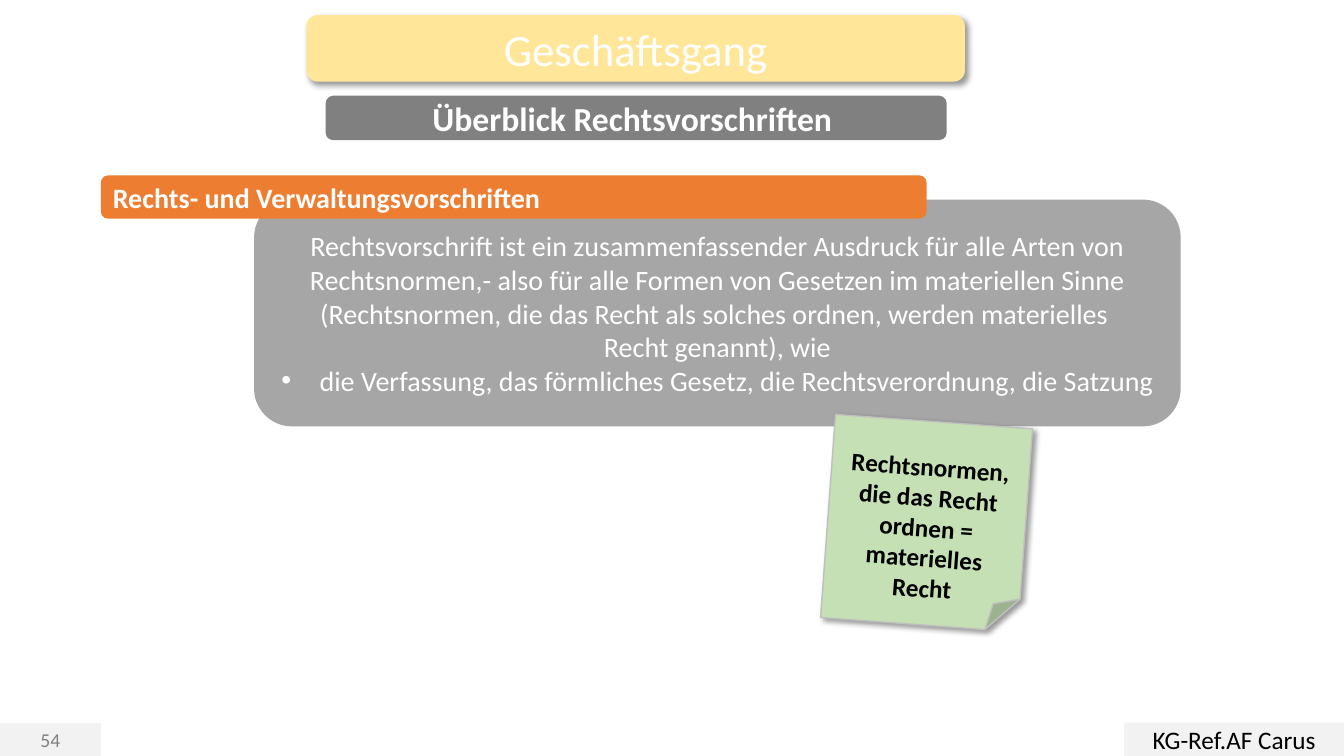
import pptx
import pptx.util
import pptx.dml.color
import pptx.enum.shapes
import pptx.enum.text
import pptx.oxml
import pptx.oxml.ns

Inches = pptx.util.Inches
Pt = pptx.util.Pt
MSO = pptx.enum.shapes.MSO_SHAPE
ALIGN = pptx.enum.text.PP_ALIGN
MIDDLE = pptx.enum.text.MSO_ANCHOR.MIDDLE

# Content
TITLE = "Geschäftsgang"
TITLE_BOX = (3.04, 0.15, 6.53, 0.66)
DEFINITION = [
    "Rechtsvorschrift ist ein zusammenfassender Ausdruck für alle Arten von "
    "Rechtsnormen,- also für alle Formen von Gesetzen im materiellen Sinne "
    "(Rechtsnormen, die das Recht als solches ordnen, werden materielles ",
    "Recht genannt), wie",
    "die Verfassung, das förmliches Gesetz, die Rechtsverordnung, die Satzung",
]
NOTE = "Rechtsnormen, die das Recht ordnen = materielles Recht"

# Shapes from back to front: preset, box, fill, line, paragraphs, text format
PARTS = {
    "definition": (MSO.ROUNDED_RECTANGLE, (2.52, 1.98, 9.19, 2.25), "A6A6A6", None,
                   DEFINITION, dict(size=20)),
    "number": (MSO.RECTANGLE, (0, 7.18, 1, 0.32), "F2F2F2", "F2F2F2",
               ["54"], dict(size=14, color="808080")),
    "author": (MSO.RECTANGLE, (11.15, 7.17, 2.18, 0.33), "F2F2F2", None,
               ["KG-Ref.AF Carus"], dict(size=18, color="000000")),
    "subtitle": (MSO.ROUNDED_RECTANGLE, (3.23, 0.95, 6.16, 0.44), "808080", None,
                 ["Überblick Rechtsvorschriften "], dict(size=24, bold=True)),
    "title_bar": (MSO.ROUNDED_RECTANGLE, TITLE_BOX, "FFE699", None, [], {}),
    "heading": (MSO.ROUNDED_RECTANGLE, (1, 1.74, 8.19, 0.43), "ED7D31", None,
                ["Rechts- und Verwaltungsvorschriften"],
                dict(size=20, bold=True, align=ALIGN.LEFT)),
    "note": (MSO.FOLDED_CORNER, (8.21, 4.18, 1.96, 2.02), "C5E0B4", "BFBFBF",
             [NOTE], dict(size=18, bold=True, color="000000")),
}


def rgb(value):
    return pptx.dml.color.RGBColor.from_string(value)


def write(tf, paragraphs, size=20, color="FFFFFF", bold=False, align=ALIGN.CENTER):
    tf.word_wrap = True
    tf.vertical_anchor = MIDDLE
    for i, text in enumerate(paragraphs):
        p = tf.paragraphs[0] if i == 0 else tf.add_paragraph()
        p.alignment = align
        r = p.add_run()
        r.text = text
        r.font.name = "Calibri"
        r.font.size = Pt(size)
        r.font.bold = bold
        r.font.color.rgb = rgb(color)


def add_part(s, preset, box, fill, line, paragraphs, style):
    sp = s.shapes.add_shape(preset, *map(Inches, box))
    sp.shadow.inherit = False
    sp.fill.solid()
    sp.fill.fore_color.rgb = rgb(fill)
    if line:
        sp.line.color.rgb = rgb(line)
        sp.line.width = Pt(1)
    else:
        sp.line.fill.background()
    write(sp.text_frame, paragraphs, **style)
    return sp


def add_shadow(sp):
    effects = sp.element.spPr.find(pptx.oxml.ns.qn("a:effectLst"))
    effects.append(pptx.oxml.parse_xml(
        f'<a:outerShdw {pptx.oxml.ns.nsdecls("a")} blurRad="{Pt(4)}" dist="{Pt(3)}" '
        f'dir="{45 * 60000}" algn="tl" rotWithShape="0"><a:srgbClr val="000000">'
        '<a:alpha val="40000"/></a:srgbClr></a:outerShdw>'))


def add_bullet(p):
    pPr = p._p.get_or_add_pPr()
    pPr.set("marL", str(Inches(0.38)))
    pPr.set("indent", str(-Inches(0.38)))
    for tag in (f'<a:buFont {pptx.oxml.ns.nsdecls("a")} typeface="Arial"/>',
                f'<a:buChar {pptx.oxml.ns.nsdecls("a")} char="•"/>'):
        pPr.append(pptx.oxml.parse_xml(tag))


def main():
    prs = pptx.Presentation()
    prs.slide_width, prs.slide_height = Inches(13.33), Inches(7.5)
    s = prs.slides.add_slide(prs.slide_layouts[5])
    parts = {name: add_part(s, *part) for name, part in PARTS.items()}

    # Bulleted examples, shadows and the tilted note
    add_bullet(parts["definition"].text_frame.paragraphs[-1])
    add_shadow(parts["title_bar"])
    add_shadow(parts["note"])
    parts["note"].rotation = 4.2
    parts["note"].text_frame.margin_top = Inches(0.45)

    # Title in front of its bar
    title = s.shapes.title
    title.left, title.top, title.width, title.height = map(Inches, TITLE_BOX)
    write(title.text_frame, [TITLE], size=32)
    s.shapes._spTree.append(title.element)

    prs.save("out.pptx")


if __name__ == "__main__":
    main()
